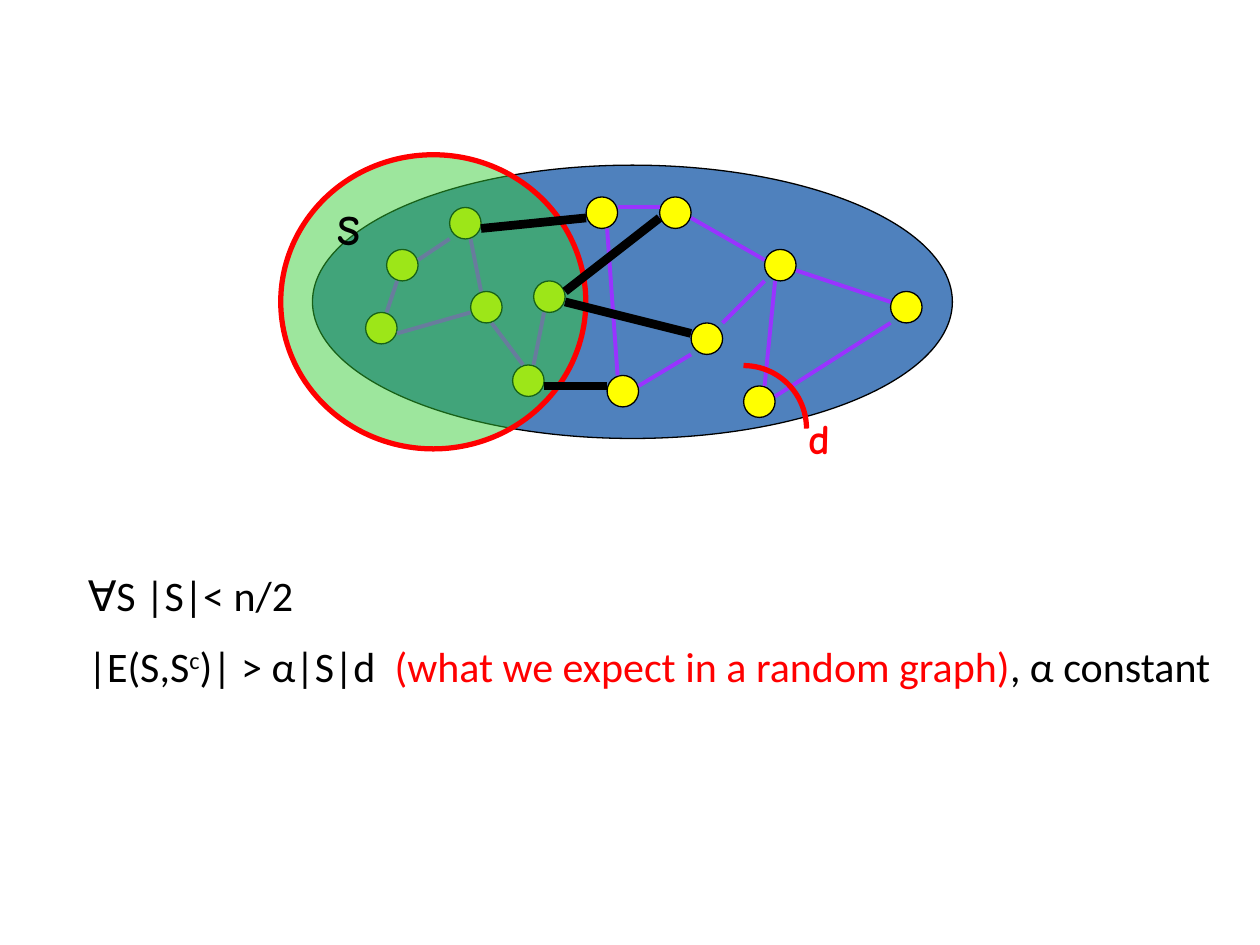
from lxml import etree
from pptx import Presentation
from pptx.dml.color import RGBColor
from pptx.enum.shapes import MSO_CONNECTOR, MSO_SHAPE
from pptx.enum.text import MSO_ANCHOR, PP_ALIGN
from pptx.oxml.ns import qn
from pptx.util import Cm, Pt

ELLIPSE, ARC = MSO_SHAPE.OVAL, MSO_SHAPE.ARC
STRAIGHT = MSO_CONNECTOR.STRAIGHT
TOP, LEFT = MSO_ANCHOR.TOP, PP_ALIGN.LEFT

BLACK, RED, YELLOW = "000000", "FF0000", "FFFF00"
BLUE, GREEN, PURPLE = "4F81BD", "33CC33", "9933FF"
BODY_FONT, LABEL_FONT = "Calibri", "Comic Neue"

# The graph lies on a grid of 12 steps to the inch; a node is 3 steps wide.
STEP = 2.54 / 12
GRID_LEFT, GRID_TOP = 7.37, 3.97
NODE_STEPS = 3

# Left and top of each node, in grid steps
NODES = [(2, 5), (8, 1), (10, 9), (0, 11), (14, 16), (16, 8), (23, 17),
         (31, 12), (36, 18), (21, 0), (50, 9), (28, 0), (38, 5)]

# Ends of each edge, in grid steps
INNER_EDGES = [
    ((3, 8), (2, 11)), ((5, 6), (8, 4)), ((3, 13), (10, 11)),
    ((12, 12), (15, 16)), ((11, 9), (10, 4)), ((17, 11), (16, 16)),
    ((23, 3), (24, 17)), ((24, 1), (28, 1)), ((26, 18), (31, 15)),
    ((38, 8), (34, 12)), ((39, 8), (38, 18)), ((31, 2), (38, 6)),
    ((41, 7), (50, 10)), ((39, 19), (50, 12)),
]
CUT_EDGES = [((11, 3), (21, 2)), ((19, 9), (28, 2)),
             ((19, 10), (31, 13)), ((17, 18), (23, 18))]

# Paragraphs of (text, colour, superscript) runs
STATEMENT = [
    [("∀S |S|< n/2", BLACK, False)],
    [("|E(S,S", BLACK, False), ("c", BLACK, True), (")| > α|S|d  ", BLACK, False),
     ("(what we expect in a random graph)", RED, False),
     (", α constant", BLACK, False)],
]


def rgb(colour):
    return RGBColor.from_string(colour)


def grid_point(point):
    return Cm(GRID_LEFT + point[0] * STEP), Cm(GRID_TOP + point[1] * STEP)


def add_outline(shapes, preset, box, fill=None, line=BLACK, width=0.75, opacity=None):
    shape = shapes.add_shape(preset, *box)
    shape.shadow.inherit = False
    if fill:
        shape.fill.solid()
        shape.fill.fore_color.rgb = rgb(fill)
    else:
        shape.fill.background()
    if opacity:
        colour = shape.fill._xPr.find(".//" + qn("a:srgbClr"))
        etree.SubElement(colour, qn("a:alpha")).set("val", str(opacity * 1000))
    shape.line.color.rgb = rgb(line)
    shape.line.width = Pt(width)
    return shape


def add_edges(shapes, edges, colour, width):
    for start, end in edges:
        edge = shapes.add_connector(STRAIGHT, *grid_point(start), *grid_point(end))
        edge.line.color.rgb = rgb(colour)
        edge.line.width = Pt(width)
        etree.SubElement(edge._element.spPr, qn("a:effectLst"))


def add_run(paragraph, text, colour=BLACK, font=BODY_FONT, bold=False, superscript=False):
    run = paragraph.add_run()
    run.text = text
    run.font.name = font
    run.font.size = Pt(24)
    run.font.bold = bold
    run.font.color.rgb = rgb(colour)
    if superscript:
        run.font._element.set("baseline", "30000")


def add_text_box(slide, box, wrap):
    frame = slide.shapes.add_textbox(*box).text_frame
    frame.word_wrap = wrap
    return frame


def box_cm(*lengths):
    return [Cm(length) for length in lengths]


def add_graph(slide):
    shapes = slide.shapes.add_group_shape().shapes
    add_outline(shapes, ELLIPSE, box_cm(6.3, 3.33, 12.9, 5.51), fill=BLUE)
    size = Cm(NODE_STEPS * STEP)
    for node in NODES:
        add_outline(shapes, ELLIPSE, (*grid_point(node), size, size), fill=YELLOW)
    add_edges(shapes, INNER_EDGES + CUT_EDGES, PURPLE, 2.25)


def add_degree_mark(slide):
    add_outline(slide.shapes, ARC, box_cm(13.72, 7.37, 2.54, 2.54), line=RED, width=3)
    frame = add_text_box(slide, box_cm(16.05, 8.2, 1.02, 1.3), wrap=False)
    add_run(frame.paragraphs[0], "d", colour=RED, font=LABEL_FONT, bold=True)


def add_subset(slide):
    subset = add_outline(slide.shapes, ELLIPSE, box_cm(5.66, 3.12, 6.15, 5.93),
                         fill=GREEN, line=RED, width=3, opacity=48)
    frame = subset.text_frame
    frame.vertical_anchor = TOP
    frame.paragraphs[0].alignment = LEFT
    add_run(frame.paragraphs[0], "S", font=LABEL_FONT, bold=True)
    add_edges(slide.shapes, CUT_EDGES, BLACK, 5)


def add_statement(slide):
    frame = add_text_box(slide, box_cm(1.52, 11.35, 23.52, 2.82), wrap=True)
    for index, runs in enumerate(STATEMENT):
        paragraph = frame.add_paragraph() if index else frame.paragraphs[0]
        paragraph.space_before = Pt(12)
        for text, colour, superscript in runs:
            add_run(paragraph, text, colour=colour, superscript=superscript)


def main():
    presentation = Presentation()
    presentation.slide_width, presentation.slide_height = Cm(25.4), Cm(19.05)
    slide = presentation.slides.add_slide(presentation.slide_layouts[6])
    add_graph(slide)
    add_degree_mark(slide)
    add_subset(slide)
    add_statement(slide)
    presentation.save("out.pptx")


if __name__ == "__main__":
    main()
